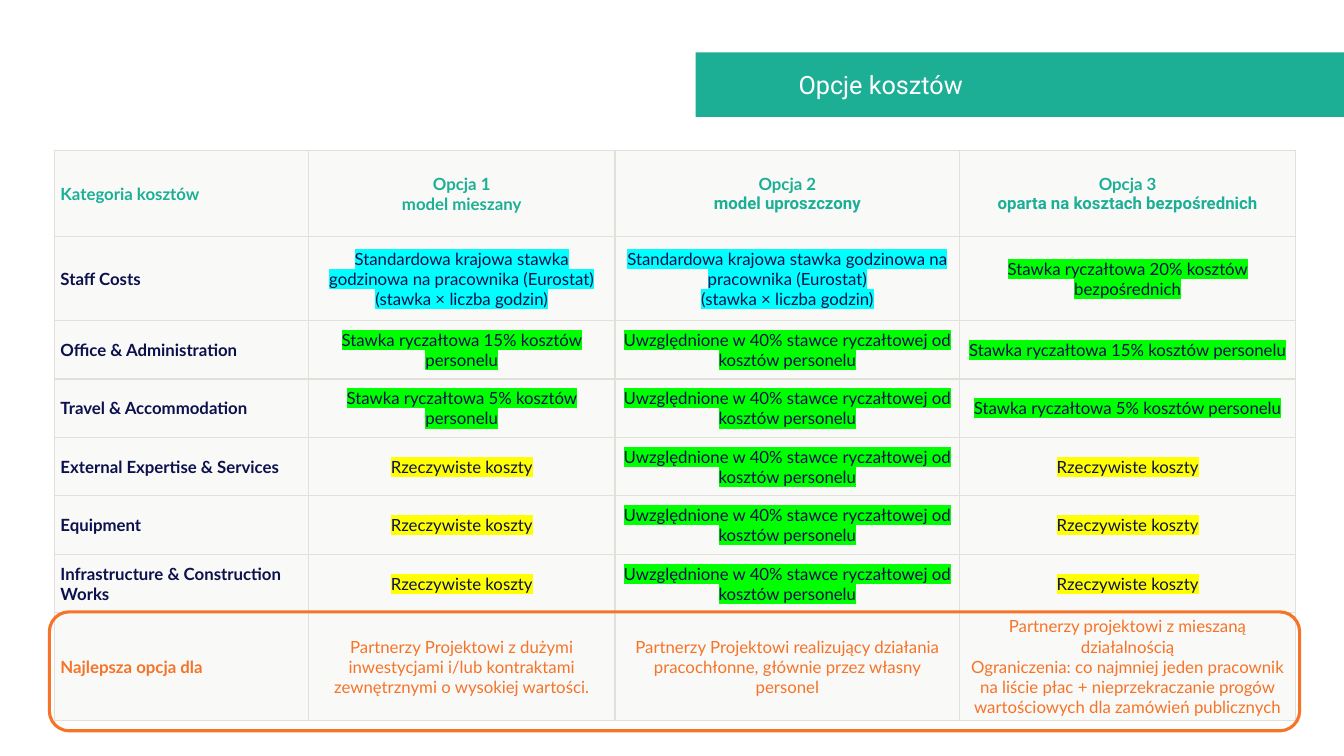
from dataclasses import dataclass

from lxml import etree
from pptx import Presentation
from pptx import util as u
from pptx.dml.color import RGBColor
from pptx.enum import shapes, text
from pptx.oxml.ns import qn


@dataclass(frozen=True)
class Theme:
    teal: str = "1CAF96"
    navy: str = "0C114D"
    orange: str = "F67428"
    white: str = "FFFFFF"
    cell: str = "F9F9F8"
    border: str = "E1E0DA"
    cyan: str = "00FFFF"
    green: str = "00FF00"
    yellow: str = "FFFF00"
    body_font: str = "Lato"
    title_font: str = "Roboto"
    body_size: int = 12
    title_size: int = 18


PX = 9144
THEME = Theme()

STANDARD_RATE = (
    "Standardowa krajowa stawka godzinowa na pracownika (Eurostat)\n"
    "(stawka × liczba godzin)",
    THEME.cyan,
)
DIRECT_20 = ("Stawka ryczałtowa 20% kosztów bezpośrednich", THEME.green)
STAFF_15 = ("Stawka ryczałtowa 15% kosztów personelu", THEME.green)
STAFF_5 = ("Stawka ryczałtowa 5% kosztów personelu", THEME.green)
INCLUDED = ("Uwzględnione w 40% stawce ryczałtowej od kosztów personelu", THEME.green)
REAL = ("Rzeczywiste koszty", THEME.yellow)

HEADER = [
    "Kategoria kosztów",
    "Opcja 1\nmodel mieszany",
    "Opcja 2\nmodel uproszczony",
    "Opcja 3\noparta na kosztach bezpośrednich",
]
COSTS = [
    ("Staff Costs", STANDARD_RATE, STANDARD_RATE, DIRECT_20),
    ("Office & Administration", STAFF_15, INCLUDED, STAFF_15),
    ("Travel & Accommodation", STAFF_5, INCLUDED, STAFF_5),
    ("External Expertise & Services", REAL, INCLUDED, REAL),
    ("Equipment", REAL, INCLUDED, REAL),
    ("Infrastructure & Construction Works", REAL, INCLUDED, REAL),
]
BEST_FOR = [
    "Najlepsza opcja dla",
    "Partnerzy Projektowi z dużymi inwestycjami i/lub kontraktami "
    "zewnętrznymi o wysokiej wartości.",
    "Partnerzy Projektowi realizujący działania pracochłonne, "
    "głównie przez własny personel",
    "Partnerzy projektowi z mieszaną działalnością\n"
    "Ograniczenia: co najmniej jeden pracownik na liście płac + "
    "nieprzekraczanie progów wartościowych dla zamówień publicznych",
]
COLUMNS = [252, 304, 342, 333]
ROWS = [86, 83] + [58] * 5 + [107]


class SlideBuilder:
    def __init__(self, prs, theme):
        self.theme = theme
        self.s = prs.slides.add_slide(prs.slide_layouts[5])

    def place(self, sp, box):
        sp.left, sp.top, sp.width, sp.height = (v * PX for v in box)

    def format_run(self, r, size, name, color, bold=False, highlight=None):
        r.font.size = u.Pt(size)
        r.font.bold = bold
        r.font.color.rgb = RGBColor.from_string(color)
        r.font.name = name
        if highlight:
            mark = etree.Element(qn("a:highlight"))
            etree.SubElement(mark, qn("a:srgbClr"), val=highlight)
            r.font.fill  
            r._r.rPr.find(qn("a:solidFill")).addnext(mark)

    def title(self, words, box):
        t = self.theme
        sp = self.s.shapes.title
        self.place(sp, box)
        geometry = etree.SubElement(sp.element.spPr, qn("a:prstGeom"), prst="roundRect")
        etree.SubElement(geometry, qn("a:avLst"))
        sp.fill.solid()
        sp.fill.fore_color.rgb = RGBColor.from_string(t.teal)
        tf = sp.text_frame
        tf.text = words
        tf.auto_size = text.MSO_AUTO_SIZE.NONE
        tf.vertical_anchor = text.MSO_ANCHOR.MIDDLE
        tf.margin_left = 102 * PX
        p = tf.paragraphs[0]
        p.alignment = text.PP_ALIGN.LEFT
        self.format_run(p.runs[0], t.title_size, t.title_font, t.white)

    def table(self, left, top, columns, rows):
        box = [v * PX for v in (left, top, sum(columns), sum(rows))]
        table = self.s.shapes.add_table(len(rows), len(columns), *box).table
        table.first_row = table.horz_banding = False
        for column, width in zip(table.columns, columns):
            column.width = width * PX
        for row, height in zip(table.rows, rows):
            row.height = height * PX
        return table

    def cell(self, cell, words, color, bold, centred, highlight=None):
        t = self.theme
        tc_pr = cell._tc.get_or_add_tcPr()
        for side in ("lnL", "lnR", "lnT", "lnB"):
            ln = etree.SubElement(tc_pr, qn(f"a:{side}"), w=str(u.Pt(1)))
            fill = etree.SubElement(ln, qn("a:solidFill"))
            etree.SubElement(fill, qn("a:srgbClr"), val=t.border)
        cell.fill.solid()
        cell.fill.fore_color.rgb = RGBColor.from_string(t.cell)
        cell.vertical_anchor = text.MSO_ANCHOR.MIDDLE
        cell.margin_left = cell.margin_right = 6 * PX
        cell.margin_top = cell.margin_bottom = 3 * PX
        cell.text_frame.text = words
        for p in cell.text_frame.paragraphs:
            p.alignment = text.PP_ALIGN.CENTER if centred else text.PP_ALIGN.LEFT
            for r in p.runs:
                self.format_run(r, t.body_size, t.body_font, color, bold, highlight)

    def frame(self, box):
        sp = self.s.shapes.add_shape(
            shapes.MSO_SHAPE.ROUNDED_RECTANGLE, *(v * PX for v in box)
        )
        sp.shadow.inherit = False
        sp.fill.background()
        sp.line.color.rgb = RGBColor.from_string(self.theme.orange)
        sp.line.width = u.Pt(2.25)


def main():
    prs = Presentation()
    prs.slide_width, prs.slide_height = 1333 * PX, 750 * PX
    slide = SlideBuilder(prs, THEME)
    slide.title("Opcje kosztów", (690, 52, 682, 64))

    table = slide.table(54, 149, COLUMNS, ROWS)
    for j, words in enumerate(HEADER):
        slide.cell(table.cell(0, j), words, THEME.teal, True, j > 0)
    for j in (2, 3):
        model = table.cell(0, j).text_frame.paragraphs[1]
        model.runs[0].font.name = THEME.title_font
    for i, (category, *options) in enumerate(COSTS, 1):
        slide.cell(table.cell(i, 0), category, THEME.navy, True, False)
        for j, (words, highlight) in enumerate(options, 1):
            slide.cell(table.cell(i, j), words, THEME.navy, False, True, highlight)
    for j, words in enumerate(BEST_FOR):
        slide.cell(table.cell(len(ROWS) - 1, j), words, THEME.orange, j == 0, j > 0)

    slide.frame((49, 607, 1240, 118))
    prs.save("out.pptx")


if __name__ == "__main__":
    main()
